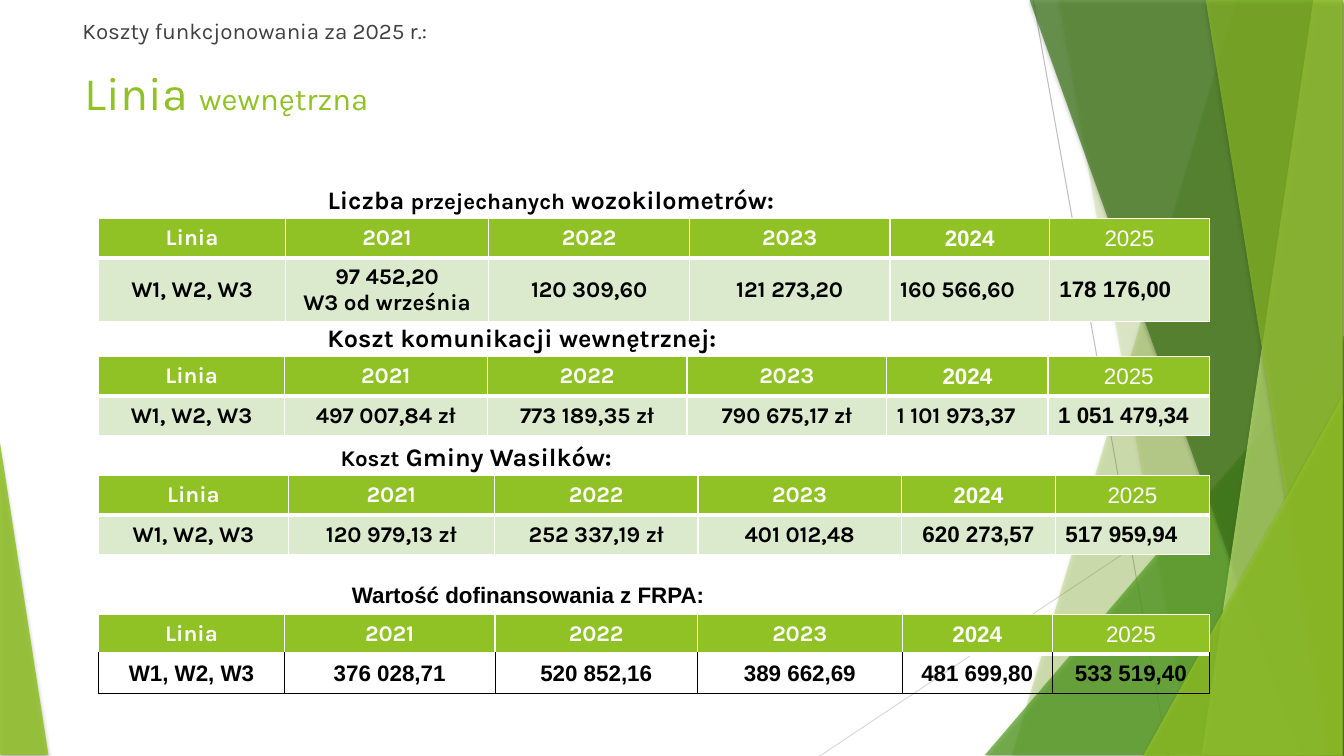
from lxml.etree import SubElement
from pptx import Presentation
from pptx.dml.color import RGBColor
from pptx.enum.shapes import MSO_CONNECTOR, MSO_SHAPE
from pptx.enum.text import MSO_ANCHOR as ANCHOR, PP_ALIGN as ALIGN
from pptx.oxml.ns import qn
from pptx.util import Inches, Pt

W, H = Inches(13.33), Inches(7.5)
GREEN, PALE, WHITE, BLACK = "90C226", "DBE9CD", "FFFFFF", "000000"
TOP, BOTTOM = -0.13, 99.87
TABLE_LEFT, TABLE_WIDTH, ROW = 7.35, 82.65, 5.2
PLAIN_TABLE = "{2D5ABB26-0587-4C30-8999-92F81FD0307C}"
YEARS = ["2021", "2022", "2023", "2024", "2025"]


# Grid of 100 columns by 100 rows
def col(n):
    return round(W * n / 100)


def row(n):
    return round(H * n / 100)


def box(left, top, width, height):
    return col(left), row(top), col(width), row(height)


def rgb(color):
    return RGBColor.from_string(color)


# Text
def write(p, text, size=16, font="Karla", color=BLACK, bold=True):
    r = p.add_run()
    r.text = text
    r.font.size, r.font.name, r.font.bold = Pt(size), font, bold
    r.font.color.rgb = rgb(color)


def add_text(s, place, parts, anchor=ANCHOR.TOP, spacing=None, **fmt):
    tf = s.shapes.add_textbox(*box(*place)).text_frame
    tf.word_wrap = True
    tf.vertical_anchor = anchor
    p = tf.paragraphs[0]
    if spacing:
        p.line_spacing = spacing
    for text, size in parts:
        write(p, text, size=size, **fmt)


# Background facets
def finish_facet(sp, color, alpha):
    sp.fill.solid()
    sp.fill.fore_color.rgb = rgb(color)
    clr = sp.fill._xPr.find(qn("a:solidFill"))[0]
    SubElement(clr, qn("a:alpha"), val=str(alpha * 1000))
    sp.line.fill.background()
    sp.shadow.inherit = False
    effects = sp._element.spPr.find(qn("a:effectLst"))
    shadow = SubElement(effects, qn("a:outerShdw"), blurRad=str(Pt(3)),
                        dist=str(Pt(2)), dir="5400000", rotWithShape="0")
    clr = SubElement(shadow, qn("a:srgbClr"), val=BLACK)
    SubElement(clr, qn("a:alpha"), val="35000")


def add_band(s, top_left, top_right, bottom_right, bottom_left, color, alpha):
    fb = s.shapes.build_freeform(col(top_left), row(TOP))
    fb.add_line_segments([(col(top_right), row(TOP)),
                          (col(bottom_right), row(BOTTOM)),
                          (col(bottom_left), row(BOTTOM))], close=True)
    finish_facet(fb.convert_to_shape(), color, alpha)


def add_triangle(s, place, apex, color, alpha):
    sp = s.shapes.add_shape(MSO_SHAPE.ISOSCELES_TRIANGLE, *box(*place))
    sp.adjustments[0] = apex
    finish_facet(sp, color, alpha)


def add_line(s, x1, y1, x2, y2, color):
    ln = s.shapes.add_connector(MSO_CONNECTOR.STRAIGHT,
                                col(x1), row(y1), col(x2), row(y2))
    ln.line.color.rgb = rgb(color)
    ln.line.width = Pt(0.75)
    SubElement(ln._element.spPr, qn("a:effectLst"))


def add_background(s):
    add_line(s, 76.88, 0, 86.93, 100.13, "BFBFBF")
    add_line(s, 100.05, 53.73, 60.9, 100.13, "D9D9D9")
    add_band(s, 92.03, 99.9, 99.9, 75.3, GREEN, 30)
    add_band(s, 78.75, 99.98, 99.98, 88.65, GREEN, 20)
    add_triangle(s, (73.28, 44.4, 26.7, 55.47), 1, "54A021", 72)
    add_band(s, 76.58, 99.9, 99.9, 96.75, "3F7819", 70)
    add_band(s, 97.73, 99.9, 99.9, 89.4, "C0E474", 70)
    add_band(s, 89.7, 99.9, 99.9, 98.78, GREEN, 65)
    add_triangle(s, (85.05, 52.4, 14.85, 47.6), 1, GREEN, 80)
    add_triangle(s, (0, 58.53, 3.6, 41.33), 0, GREEN, 85)


# Tables
def new_table(s, rows, cols, place):
    tbl = s.shapes.add_table(rows, cols, *box(*place)).table
    tbl.horz_banding = tbl.first_row = False
    tbl._tbl.tblPr.find(qn("a:tableStyleId")).text = PLAIN_TABLE
    return tbl


def set_borders(cell, color, width, bottom):
    tcPr = cell._tc.get_or_add_tcPr()
    for side in "LRTB":
        pt = bottom if side == "B" else width
        ln = SubElement(tcPr, qn("a:ln" + side), w=str(Pt(pt)))
        SubElement(SubElement(ln, qn("a:solidFill")), qn("a:srgbClr"), val=color)


def fill_cell(cell, text, fill=None, align=ALIGN.CENTER, anchor=ANCHOR.MIDDLE,
              border=None, narrow=False, **fmt):
    if border:
        set_borders(cell, *border)
    if fill:
        cell.fill.solid()
        cell.fill.fore_color.rgb = rgb(fill)
    else:
        cell.fill.background()
    if narrow:
        cell.margin_left = cell.margin_right = Inches(0.04)
    cell.vertical_anchor = anchor
    tf = cell.text_frame
    for i, line in enumerate(text.split("\n")):
        p = tf.add_paragraph() if i else tf.paragraphs[0]
        p.alignment = align
        write(p, line, **fmt)


def add_cost_table(s, top, widths, values, arial=(5,), left=(), height=ROW,
                   outlined=False):
    tbl = new_table(s, 2, 6, (TABLE_LEFT, top, TABLE_WIDTH, ROW + height))
    tbl.rows[0].height, tbl.rows[1].height = row(ROW), row(height)
    for i, width in enumerate(widths):
        tbl.columns[i].width = col(TABLE_WIDTH * width / sum(widths))
    for i, year in enumerate(["Linia"] + YEARS):
        fill_cell(tbl.cell(0, i), year, fill=GREEN, border=(WHITE, 0.96, 3),
                  color=WHITE, bold=year != "2025",
                  font="Arial" if i > 3 else "Karla")
    for i, value in enumerate(["W1, W2, W3"] + values):
        fill_cell(tbl.cell(1, i), value, fill=None if outlined else PALE,
                  border=(BLACK, 0.57, 0.57) if outlined else (WHITE, 0.96, 0.96),
                  narrow=outlined, align=ALIGN.LEFT if i in left else ALIGN.CENTER,
                  font="Arial" if i in arial else "Karla")


def main():
    prs = Presentation()
    prs.slide_width, prs.slide_height = W, H
    s = prs.slides.add_slide(prs.slide_layouts[6])
    add_background(s)

    # Heading
    add_text(s, (5.55, 8.93, 70.43, 7.73), [("Linia ", 33.3), ("wewnętrzna", 22.2)],
             anchor=ANCHOR.MIDDLE, spacing=0.8, color=GREEN, bold=False)
    add_text(s, (5.4, 1.6, 77.25, 5.33), [("Koszty funkcjonowania za 2025 r.:", 16)],
             color="404040", bold=False)

    # Vehicle kilometres
    add_text(s, (23.63, 23.73, 37.43, 5.33),
             [("Liczba ", 18), ("przejechanych", 16), (" wozokilometrów:", 18)])
    add_cost_table(s, 28.93, [1.85, 2.02, 1.99, 1.99, 1.58, 1.59],
                   ["97 452,20\nW3 od września", "120 309,60", "121 273,20",
                    "160 566,60", "178 176,00"], left=(4, 5), height=8.4)

    # Cost of the internal line
    add_text(s, (23.63, 42, 30.45, 5.33), [("Koszt komunikacji wewnętrznej:", 18)])
    add_cost_table(s, 47.2, [1.84, 2.01, 1.98, 1.98, 1.6, 1.6],
                   ["497 007,84 zł", "773 189,35 zł", "790 675,17 zł",
                    "1 101 973,37", "1 051 479,34"], left=(4, 5))

    # Cost borne by the municipality
    add_text(s, (24.6, 57.73, 30, 5.33), [("Koszt", 16), (" Gminy Wasilków:", 18)])
    add_cost_table(s, 62.93, [1.88, 2.05, 2.02, 2.02, 1.53, 1.53],
                   ["120 979,13 zł", "252 337,19 zł", "401 012,48",
                    "620 273,57", "517 959,94"], arial=(4, 5), left=(5,))

    # Subsidy
    caption = new_table(s, 1, 1, (25.88, 76.53, 27.53, ROW))
    fill_cell(caption.cell(0, 0), "Wartość dofinansowania z FRPA:", font="Arial",
              align=ALIGN.LEFT, anchor=ANCHOR.TOP, narrow=True)
    add_cost_table(s, 81.33, [1.84, 2.09, 2.01, 2.03, 1.49, 1.56],
                   ["376 028,71", "520 852,16", "389 662,69",
                    "481 699,80", "533 519,40"], arial=range(6), outlined=True)

    prs.save("out.pptx")


if __name__ == "__main__":
    main()
